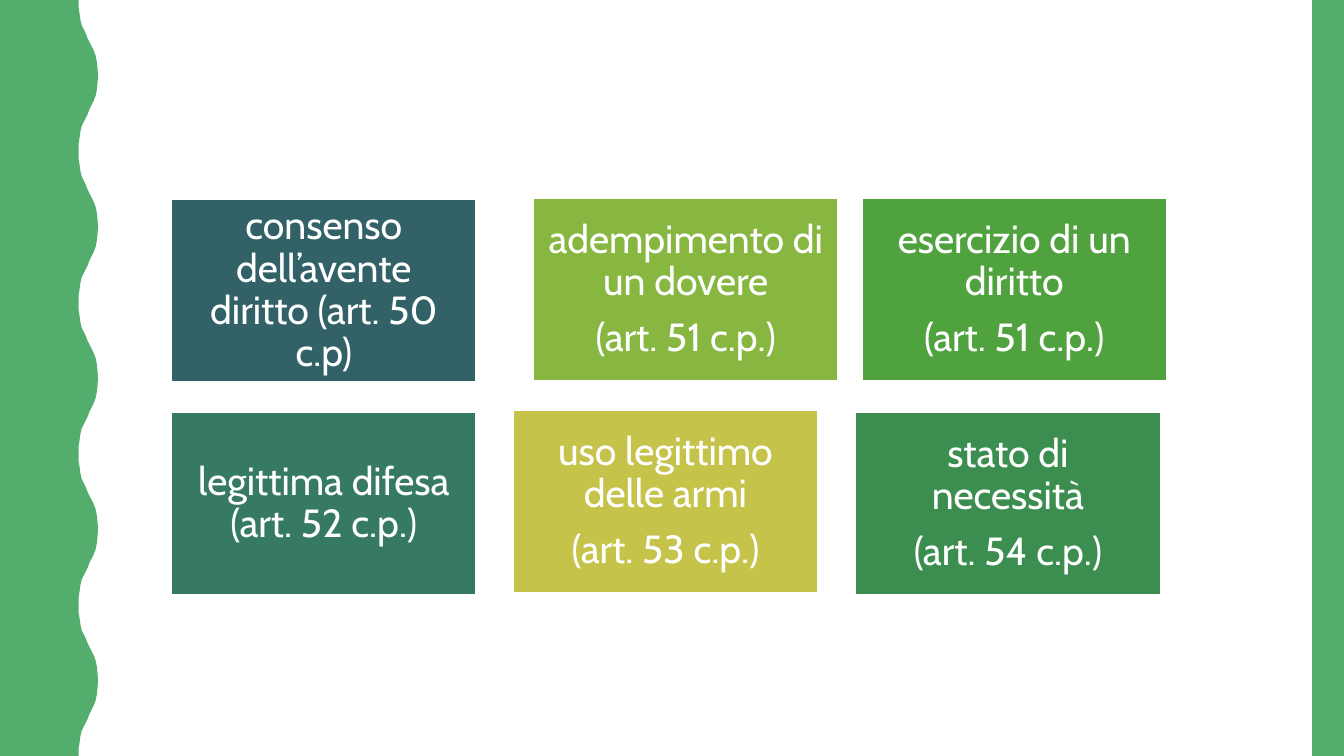
from dataclasses import dataclass

from pptx import Presentation
from pptx.dml.color import RGBColor
from pptx.enum.shapes import MSO_SHAPE
from pptx.enum.text import MSO_ANCHOR, PP_ALIGN
from pptx.shapes.autoshape import Shape
from pptx.slide import Slide
from pptx.util import Cm, Pt

WHITE = RGBColor(0xFF, 0xFF, 0xFF)
GREEN = RGBColor(0x53, 0xAE, 0x6E)
PETROL = RGBColor(0x32, 0x62, 0x67)
LIME = RGBColor(0x87, 0xB7, 0x40)
LEAF = RGBColor(0x4F, 0xA2, 0x3E)
TEAL = RGBColor(0x37, 0x7A, 0x64)
MUSTARD = RGBColor(0xC5, 0xC3, 0x4A)
FOREST = RGBColor(0x3B, 0x8E, 0x4F)

SLIDE_W, SLIDE_H = 33.87, 19.05
BAR_W = 0.8
CARD_W, CARD_H = 7.68, 4.6
CARD_INSET = 0.3
FONT = "Cabin"
FONT_SIZE = 28

HALF_WAVES = 10
HALF_WAVE_H = SLIDE_H / HALF_WAVES
# One half wave, from trough to crest: x, and y below its start
WAVE_X = [1.98, 1.98, 2.01, 2.03, 2.06, 2.11, 2.16, 2.21,
          2.26, 2.31, 2.36, 2.41, 2.44, 2.46, 2.47]
WAVE_Y = [0, 0.18, 0.36, 0.51, 0.64, 0.74, 0.84, 0.97,
          1.07, 1.17, 1.27, 1.4, 1.55, 1.73, HALF_WAVE_H]


@dataclass(frozen=True)
class Card:
    left: float
    top: float
    fill: RGBColor
    text: str


CARDS = [
    Card(4.32, 5.02, PETROL, "consenso dell’avente diritto (art. 50 c.p)"),
    Card(13.44, 5, LIME, "adempimento di un dovere\n(art. 51 c.p.)"),
    Card(21.72, 5, LEAF, "esercizio di un diritto\n(art. 51 c.p.)"),
    Card(4.32, 10.39, TEAL, "legittima difesa (art. 52 c.p.)"),
    Card(12.93, 10.34, MUSTARD, "uso legittimo delle armi\n(art. 53 c.p.)"),
    Card(21.56, 10.39, FOREST, "stato di necessità\n(art. 54 c.p.)"),
]


def fill_flat(sp: Shape, color: RGBColor) -> None:
    """Give the shape a solid fill without outline or shadow."""
    sp.shadow.inherit = False
    sp.fill.solid()
    sp.fill.fore_color.rgb = color
    sp.line.fill.background()


def add_box(s: Slide, left: float, top: float, width: float, height: float,
            color: RGBColor) -> Shape:
    sp = s.shapes.add_shape(MSO_SHAPE.RECTANGLE,
                            Cm(left), Cm(top), Cm(width), Cm(height))
    fill_flat(sp, color)
    return sp


def add_wavy_edge(s: Slide) -> None:
    edge = []
    for i in range(HALF_WAVES):
        xs = WAVE_X if i % 2 == 0 else WAVE_X[::-1]
        edge += [(Cm(x), Cm(i * HALF_WAVE_H + y)) for x, y in zip(xs, WAVE_Y)]
    builder = s.shapes.build_freeform(0, 0, scale=1.0)
    builder.add_line_segments(edge + [(0, Cm(SLIDE_H))], close=True)
    fill_flat(builder.convert_to_shape(), GREEN)


def add_card(s: Slide, card: Card) -> None:
    sp = add_box(s, card.left, card.top, CARD_W, CARD_H, card.fill)
    sp.line.color.rgb = WHITE
    sp.line.width = Pt(1)
    tf = sp.text_frame
    tf.word_wrap = True
    tf.vertical_anchor = MSO_ANCHOR.MIDDLE
    tf.margin_left = tf.margin_right = Cm(CARD_INSET)
    tf.margin_top = tf.margin_bottom = Cm(CARD_INSET)
    tf.text = card.text
    for p in tf.paragraphs:
        p.alignment = PP_ALIGN.CENTER
        p.line_spacing = 0.9
        p.space_after = Pt(0.35 * FONT_SIZE)
        for r in p.runs:
            r.font.name = FONT
            r.font.size = Pt(FONT_SIZE)
            r.font.color.rgb = WHITE


def main() -> None:
    prs = Presentation()
    prs.slide_width, prs.slide_height = Cm(SLIDE_W), Cm(SLIDE_H)
    s = prs.slides.add_slide(prs.slide_layouts[6])
    add_wavy_edge(s)
    add_box(s, SLIDE_W - BAR_W, 0, BAR_W, SLIDE_H, GREEN)
    for card in CARDS:
        add_card(s, card)
    prs.save("out.pptx")


if __name__ == "__main__":
    main()
